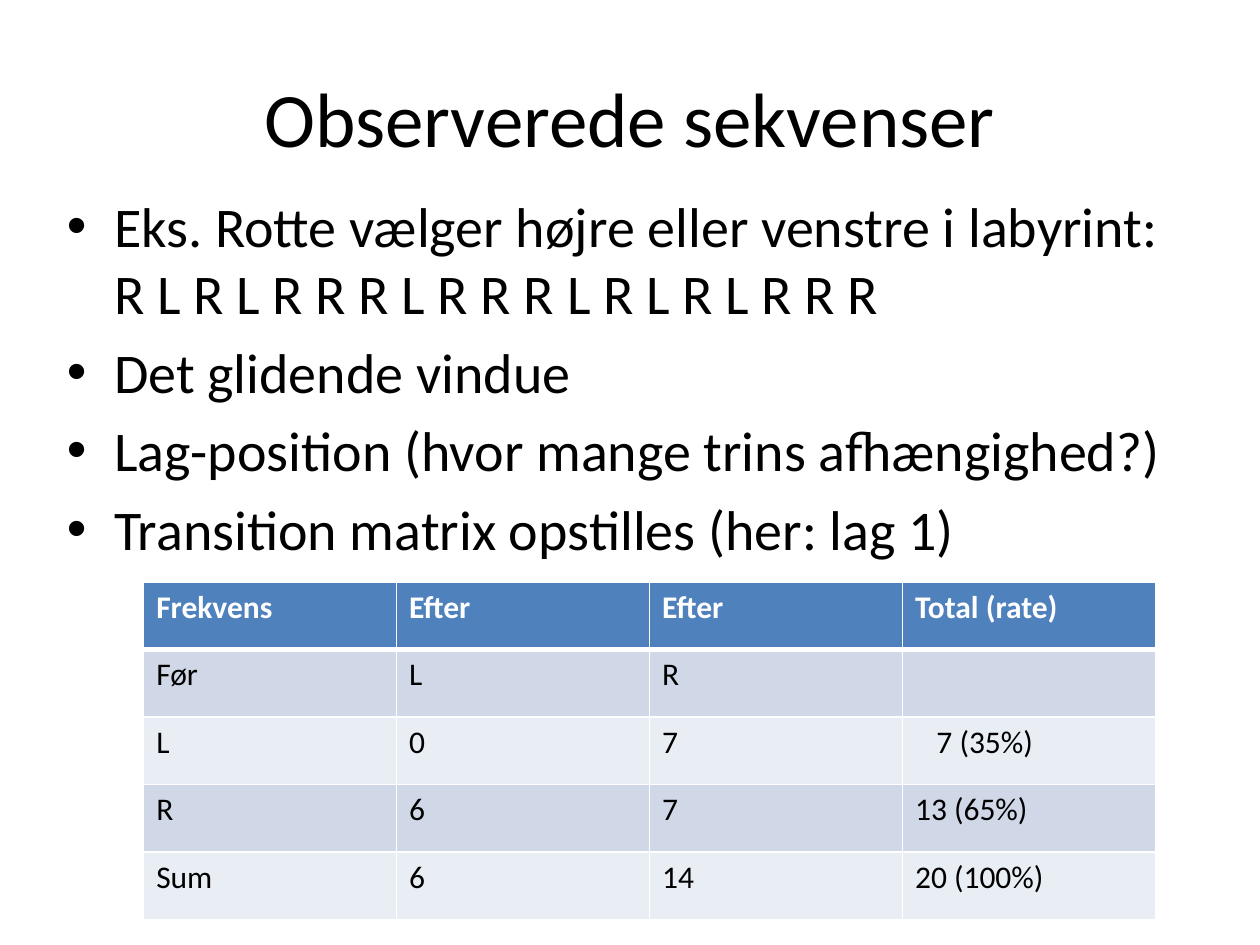
from lxml.etree import SubElement
from pptx import Presentation
from pptx.dml.color import RGBColor
from pptx.enum.text import MSO_ANCHOR, PP_ALIGN
from pptx.oxml.ns import qn
from pptx.util import Inches, Pt

BLACK, WHITE, BLUE = "000000", "FFFFFF", "4F81BD"
BANDS = ("D0D8E8", "E9EDF4")


def rgb(value):
    return RGBColor.from_string(value)


class Deck:
    """Holds the style and the current slide, and adds each kind of element."""

    def __init__(self, prs, font="Calibri"):
        self.font = font
        self.s = prs.slides.add_slide(prs.slide_layouts[1])

    def place(self, sp, x, y, w, h):
        sp.left, sp.top, sp.width, sp.height = map(Inches, (x, y, w, h))
        return sp.text_frame

    def run(self, p, text, size, color=BLACK, bold=False):
        r = p.add_run()
        r.text = text
        r.font.name, r.font.size, r.font.bold = self.font, Pt(size), bold
        r.font.color.rgb = rgb(color)

    def title(self, text, *box):
        tf = self.place(self.s.shapes.title, *box)
        tf.vertical_anchor = MSO_ANCHOR.MIDDLE
        p = tf.paragraphs[0]
        p.alignment = PP_ALIGN.CENTER
        self.run(p, text, 44)

    def bullets(self, items, *box):
        tf = self.place(self.s.placeholders[1], *box)
        for i, item in enumerate(items):
            p = tf.add_paragraph() if i else tf.paragraphs[0]
            self.run(p, item, 32)

    def borders(self, cell, bottom):
        tc_pr = cell._tc.get_or_add_tcPr()
        widths = {"lnL": 1, "lnR": 1, "lnT": 1, "lnB": bottom}
        for i, (side, width) in enumerate(widths.items()):
            ln = SubElement(tc_pr, qn(f"a:{side}"), w=str(Pt(width)))
            fill = SubElement(ln, qn("a:solidFill"))
            SubElement(fill, qn("a:srgbClr"), val=WHITE)
            tc_pr.insert(i, ln)

    def table(self, rows, *box):
        frame = self.s.shapes.add_table(len(rows), len(rows[0]), *map(Inches, box))
        for i, row in enumerate(rows):
            head = i == 0
            for j, text in enumerate(row):
                cell = frame.table.cell(i, j)
                cell.fill.solid()
                cell.fill.fore_color.rgb = rgb(BLUE if head else BANDS[(i - 1) % 2])
                self.borders(cell, 3 if head else 1)
                if text:
                    p = cell.text_frame.paragraphs[0]
                    self.run(p, text, 18, WHITE if head else BLACK, head)
        return frame.table


def main():
    prs = Presentation()
    prs.slide_width, prs.slide_height = Inches(10), Inches(7.5)
    deck = Deck(prs)
    deck.title("Observerede sekvenser", 0.5, 0.3, 9, 1.25)
    deck.bullets([
        "Eks. Rotte vælger højre eller venstre i labyrint: "
        "R L R L R R R L R R R L R L R L R R R",
        "Det glidende vindue",
        "Lag-position (hvor mange trins afhængighed?)",
        "Transition matrix opstilles (her: lag 1)",
    ], 0.43, 1.47, 9, 4.95)
    matrix = deck.table([
        ["Frekvens", "Efter", "Efter", "Total (rate)"],
        ["Før", "L", "R", ""],
        ["L", "0", "7", "7 (35%)"],
        ["R", "6", "7", "13 (65%)"],
        ["Sum", "6", "14", "20 (100%)"],
    ], 1.14, 4.62, 8.03, 2.68)
    matrix.cell(2, 3).margin_left = Inches(0.27)
    prs.save("out.pptx")


if __name__ == "__main__":
    main()
